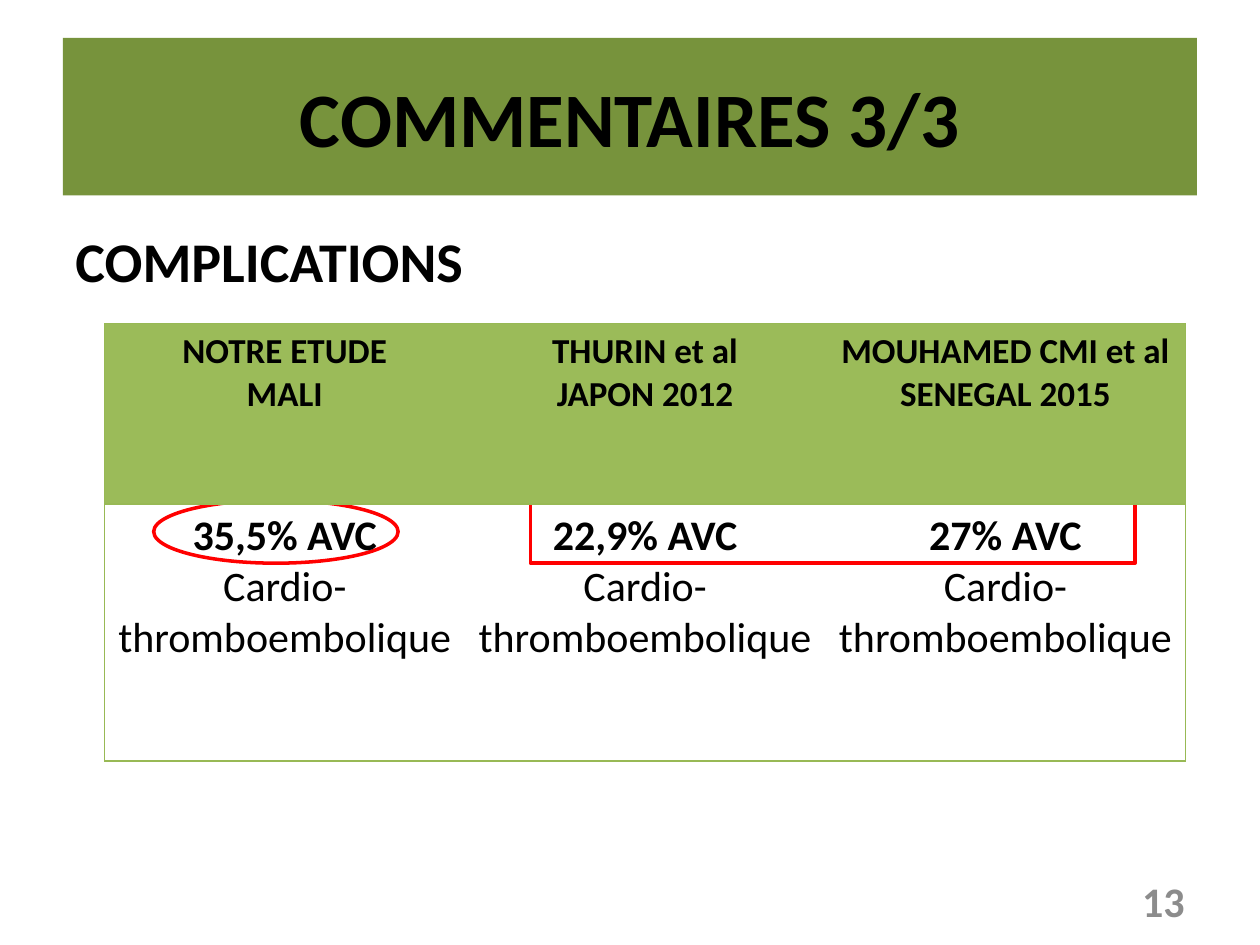
import pptx
import pptx.util
import pptx.dml.color
import pptx.enum.shapes
import pptx.enum.text
import pptx.oxml
import pptx.oxml.ns

Inches = pptx.util.Inches
Pt = pptx.util.Pt
SHAPE = pptx.enum.shapes.MSO_SHAPE
ALIGN = pptx.enum.text.PP_ALIGN
ANCHOR = pptx.enum.text.MSO_ANCHOR


def color(value):
    return pptx.dml.color.RGBColor.from_string(value)


def write(para, text, size, bold=True, shade="000000", align=ALIGN.CENTER):
    para.alignment = align
    span = para.add_run()
    span.text = text
    for name, value in {"name": "Calibri", "size": Pt(size), "bold": bold}.items():
        setattr(span.font, name, value)
    span.font.color.rgb = color(shade)


deck = pptx.Presentation()
for name, value in {"slide_width": Inches(10), "slide_height": Inches(7.5)}.items():
    setattr(deck, name, value)
page = deck.slides.add_slide(deck.slide_layouts[6])

for kind, left, width in [(SHAPE.RECTANGLE, 4.21, 4.8), (SHAPE.OVAL, 1.22, 1.94)]:
    marker = page.shapes.add_shape(kind, Inches(left), Inches(3.97), Inches(width), Inches(0.5))
    marker.shadow.inherit = False
    marker.fill.solid()
    marker.fill.fore_color.rgb = color("FFFFFF")
    marker.line.color.rgb = color("FF0000")
    marker.line.width = Pt(2)

texts = [
    ("COMMENTAIRES 3/3", (0.5, 0.3, 9, 1.25), 44, "000000", ALIGN.CENTER, ANCHOR.MIDDLE, "77933C"),
    ("COMPLICATIONS", (0.5, 1.75, 9, 4.95), 32, "000000", ALIGN.LEFT, ANCHOR.TOP, None),
    ("13", (7.17, 6.95, 2.33, 0.4), 24, "8C8C8C", ALIGN.RIGHT, ANCHOR.MIDDLE, None),
]
for text, place, size, shade, align, anchor, fill in texts:
    box = page.shapes.add_textbox(*map(Inches, place))
    if fill:
        box.fill.solid()
        box.fill.fore_color.rgb = color(fill)
    for name, value in {"word_wrap": True, "vertical_anchor": anchor}.items():
        setattr(box.text_frame, name, value)
    para = box.text_frame.paragraphs[0]
    write(para, text, size, shade=shade, align=align)
    if text == "COMPLICATIONS":
        para.space_before = Pt(6.4)

studies = [
    (["NOTRE ETUDE", "MALI"], "35,5% AVC"),
    (["THURIN et al", "JAPON 2012"], "22,9% AVC"),
    (["MOUHAMED CMI et al SENEGAL 2015"], "27% AVC"),
]
table = page.shapes.add_table(
    2, 3, Inches(0.83), Inches(2.57), Inches(8.58), Inches(3.47)
).table
for name in ("first_row", "horz_banding"):
    setattr(table, name, False)
for row, height in zip(table.rows, (1.43, 2.04)):
    row.height = Inches(height)

for column, (heading, rate) in enumerate(studies):
    table.columns[column].width = Inches(2.86)
    for row, lines in enumerate([heading, [rate, "Cardio-thromboembolique"]]):
        cell = table.cell(row, column)
        for index, line in enumerate(lines):
            frame = cell.text_frame
            para = frame.add_paragraph() if index else frame.paragraphs[0]
            write(para, line, 24 if row else 20, bold=row == 0 or index == 0)
        if row == 0:
            cell.fill.solid()
            cell.fill.fore_color.rgb = color("9BBB59")
        else:
            cell.fill.background()
        borders = {"L": column == 0, "R": column == 2, "T": True, "B": True}
        properties = cell._tc.get_or_add_tcPr()
        for index, (side, visible) in enumerate(borders.items()):
            paint = '<a:solidFill><a:srgbClr val="98B955"/></a:solidFill>' if visible else "<a:noFill/>"
            properties.insert(index, pptx.oxml.parse_xml(
                f'<a:ln{side} {pptx.oxml.ns.nsdecls("a")} w="{Pt(0.75)}">{paint}</a:ln{side}>'
            ))

deck.save("out.pptx")
